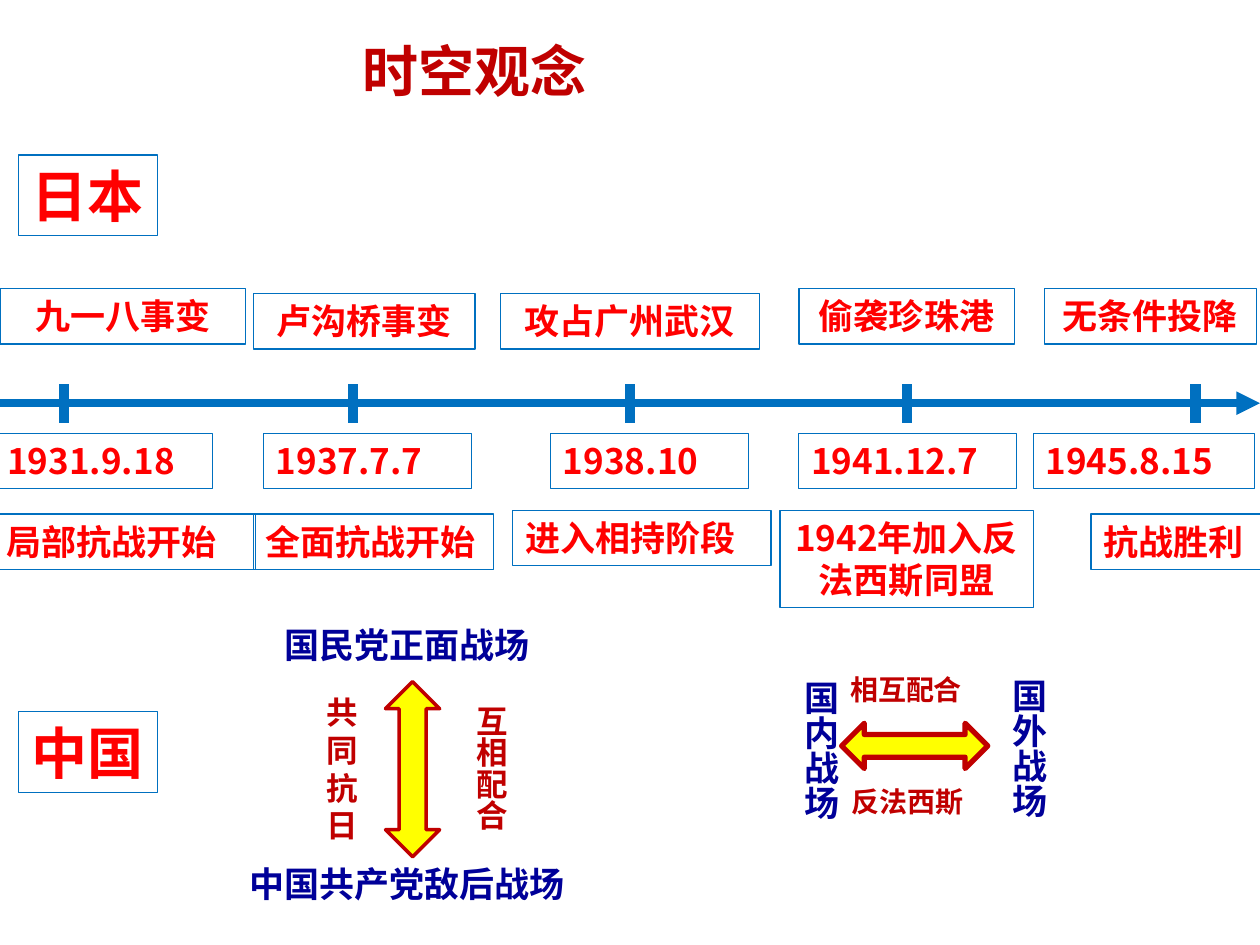
from lxml.etree import SubElement
from pptx import Presentation
from pptx.dml.color import RGBColor
from pptx.enum.shapes import MSO_CONNECTOR as Connector, MSO_SHAPE as Preset
from pptx.enum.text import MSO_ANCHOR as Anchor, MSO_AUTO_SIZE as AutoSize, PP_ALIGN as Align
from pptx.oxml.ns import qn
from pptx.util import Inches, Pt

CJK_FONT = "Noto Sans CJK SC"
BLUE, RED, DARK_RED, NAVY, YELLOW = "0070C0", "FF0000", "C00000", "000099", "FFFF00"


def color(hex_code):
    """Turn a hex string into a colour."""
    return RGBColor.from_string(hex_code)


def write(holder, text, size=20, ink=RED, font=CJK_FONT, align=Align.LEFT, wrap=True, vertical=False):
    """Put bold text in a shape that grows with it."""
    frame = holder.text_frame
    frame.word_wrap = wrap
    frame.auto_size = AutoSize.SHAPE_TO_FIT_TEXT
    frame.vertical_anchor = Anchor.TOP
    if vertical:
        holder.element.txBody.bodyPr.set("vert", "eaVert")
    paragraph = frame.paragraphs[0]
    paragraph.alignment = align
    run = paragraph.add_run()
    run.text = text
    run.font.size, run.font.bold, run.font.name = Pt(size), True, font
    run.font.color.rgb = color(ink)
    SubElement(run._r.get_or_add_rPr(), qn("a:ea")).set("typeface", CJK_FONT)


class TimelineSlide:
    """Holds the slide and its style."""

    def __init__(self, deck):
        """Add a slide with only a title."""
        self.slide = deck.slides.add_slide(deck.slide_layouts[5])
        self.shapes = self.slide.shapes

    def title(self, text, left, top, width, height, **style):
        """Place and write the title."""
        heading = self.shapes.title
        heading.left, heading.top = Inches(left), Inches(top)
        heading.width, heading.height = Inches(width), Inches(height)
        write(heading, text, **style)

    def label(self, text, left, top, width, height=0.44, **style):
        """Add text without a frame."""
        label = self.shapes.add_textbox(Inches(left), Inches(top), Inches(width), Inches(height))
        write(label, text, **style)
        return label

    def box(self, text, left, top, width, height=0.44, **style):
        """Add text in a thin blue frame."""
        frame = self.label(text, left, top, width, height, **style)
        frame.line.color.rgb = color(BLUE)
        frame.line.width = Pt(0.75)

    def line(self, start, end, width, arrow=False):
        """Add a straight blue line."""
        line = self.shapes.add_connector(Connector.STRAIGHT, *map(Inches, start + end))
        line.line.color.rgb = color(BLUE)
        line.line.width = Pt(width)
        if arrow:
            SubElement(line.line._get_or_add_ln(), qn("a:tailEnd")).set("type", "triangle")
        SubElement(line.element.spPr, qn("a:effectLst"))

    def arrow(self, preset, left, top, width, height, outline):
        """Add a yellow double arrow."""
        arrow = self.shapes.add_shape(preset, Inches(left), Inches(top), Inches(width), Inches(height))
        arrow.shadow.inherit = False
        arrow.fill.solid()
        arrow.fill.fore_color.rgb = color(YELLOW)
        arrow.line.color.rgb = color(DARK_RED)
        arrow.line.width = Pt(outline)


def main():
    """Build the timeline of the war."""
    deck = Presentation()
    deck.slide_width, deck.slide_height = Inches(10), Inches(7.5)
    page = TimelineSlide(deck)
    page.title("时空观念", 2.78, 0.24, 2.01, 0.64, size=32, ink=DARK_RED, wrap=False)

    page.line((0, 3.2), (10, 3.2), 4.5, arrow=True)
    for tick in (0.51, 2.8, 5, 7.2, 9.49):
        page.line((tick, 3.05), (tick, 3.36), 6)

    dates = [("1931.9.18", -0.04, 1.73), ("1937.7.7", 2.09, 1.65), ("1938.10", 4.37, 1.57),
             ("1941.12.7", 6.34, 1.73), ("1945.8.15", 8.2, 1.76)]
    for date, left, width in dates:
        page.box(date, left, 3.44, width)

    stages = [("局部抗战开始", -0.05, 4.08, 2.08), ("全面抗战开始", 2.01, 4.08, 1.91),
              ("进入相持阶段", 4.07, 4.05, 2.05), ("抗战胜利", 8.66, 4.08, 1.35)]
    for stage in stages:
        page.box(*stage)
    page.box("1942年加入反法西斯同盟", 6.19, 4.05, 2.01, 0.77, align=Align.CENTER)

    events = [("九一八事变", 0, 2.29, 1.95), ("卢沟桥事变", 2.01, 2.33, 1.76), ("攻占广州武汉", 3.97, 2.33, 2.06),
              ("偷袭珍珠港", 6.34, 2.29, 1.71), ("无条件投降", 8.29, 2.29, 1.68)]
    for event in events:
        page.box(*event, align=Align.CENTER)

    for country, top in (("日本", 1.23), ("中国", 5.65)):
        page.box(country, 0.15, top, 1.1, 0.64, size=32, wrap=False)

    page.label("国民党正面战场", 2.16, 4.9, 2.17, ink=NAVY, wrap=False)
    page.label("中国共产党敌后战场", 1.88, 6.8, 2.73, ink=NAVY, wrap=False)
    page.arrow(Preset.UP_DOWN_ARROW, 3.06, 5.41, 0.43, 1.39, 2)
    page.label("共同抗日", 2.49, 5.45, 0.59, 1.31, size=18, ink=DARK_RED)
    page.label("互相配合", 3.6, 5.5, 0.5, 1.11, size=18, ink=DARK_RED, wrap=False, vertical=True)

    for front, left, top in (("国内战场", 6.19, 5.3), ("国外战场", 7.84, 5.29)):
        page.label(front, left, top, 0.54, 1.22, ink=NAVY, wrap=False, vertical=True)
    page.arrow(Preset.LEFT_RIGHT_ARROW, 6.68, 5.74, 1.16, 0.36, 3)
    for note, left, top in (("相互配合", 6.65, 5.29), ("反法西斯", 6.66, 6.18)):
        page.label(note, left, top, 1.11, 0.37, size=16, ink=DARK_RED, font="Calibri", wrap=False)

    deck.save("out.pptx")


if __name__ == "__main__":
    main()
